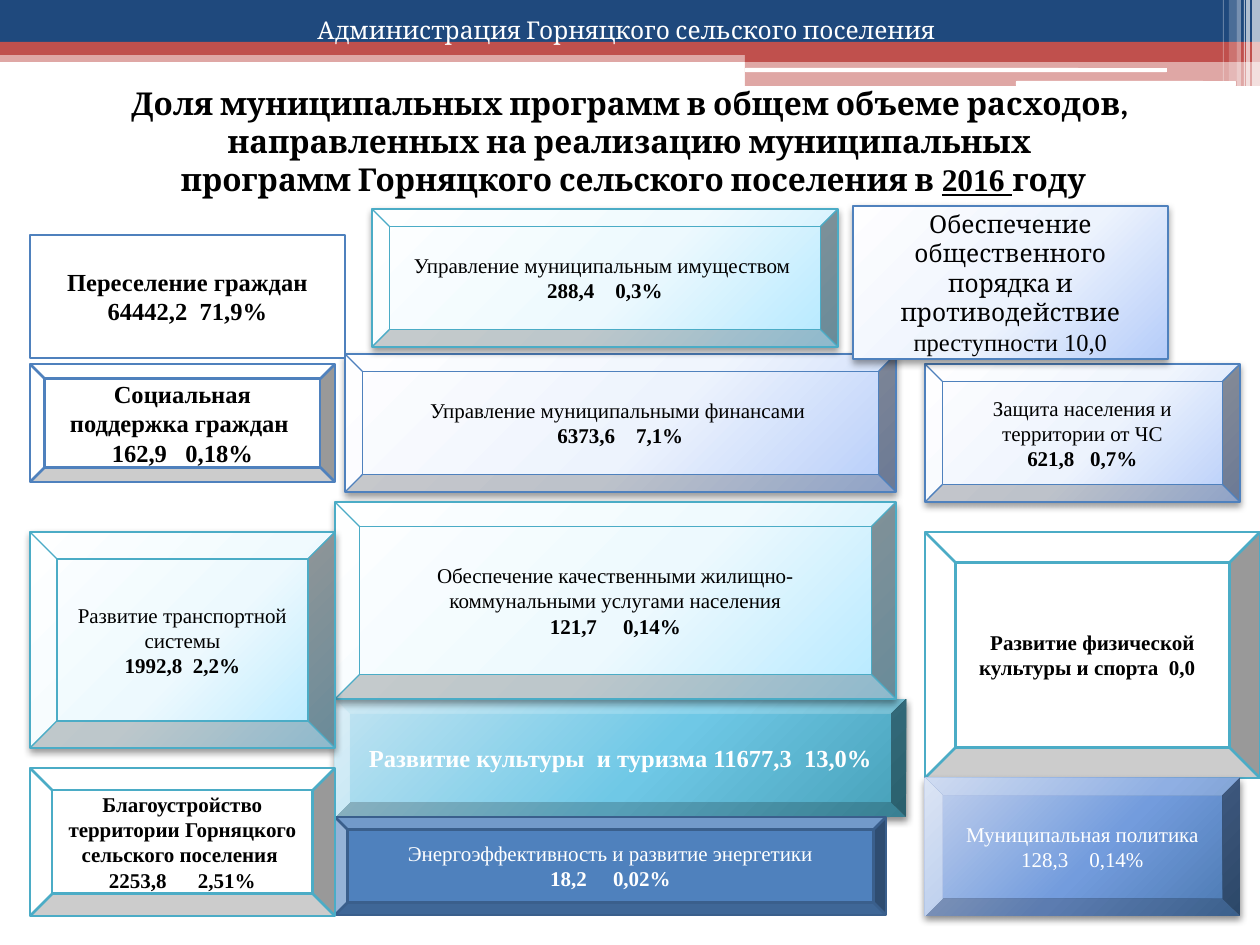
"""Build a slide on the shares of municipal programmes in total spending."""
import pptx
import pptx.dml.color
import pptx.enum.shapes
import pptx.enum.text
import pptx.oxml
import pptx.oxml.ns
import pptx.util

RGBColor = pptx.dml.color.RGBColor
Shapes = pptx.enum.shapes.MSO_SHAPE
Align = pptx.enum.text.PP_ALIGN
Anchor = pptx.enum.text.MSO_ANCHOR
qn = pptx.oxml.ns.qn
NAMESPACE = pptx.oxml.ns.nsdecls("a")

SCALE = 914400 / 126
NAVY = RGBColor(0x1F, 0x49, 0x7D)
RED = RGBColor(0xC0, 0x50, 0x4D)
WHITE = RGBColor(0xFF, 0xFF, 0xFF)
BLACK = RGBColor(0x00, 0x00, 0x00)
BLUE = RGBColor(0x4F, 0x81, 0xBD)
DARK_BLUE = RGBColor(0x3A, 0x5F, 0x8C)
TEAL = RGBColor(0x4B, 0xAC, 0xC6)
PALE_BLUE = [RGBColor(0xFE, 0xFE, 0xFF), RGBColor(0xED, 0xF3, 0xFD), RGBColor(0xB5, 0xCC, 0xF9)]
PALE_TEAL = [RGBColor(0xFE, 0xFF, 0xFF), RGBColor(0xED, 0xF9, 0xFE), RGBColor(0xB2, 0xE8, 0xFF)]
STRONG_BLUE = [RGBColor(0xC4, 0xD2, 0xEE), RGBColor(0x73, 0x9C, 0xDD), RGBColor(0x4A, 0x78, 0xB0)]
STRONG_TEAL = [RGBColor(0xC2, 0xE4, 0xF2), RGBColor(0x6F, 0xC8, 0xE6), RGBColor(0x46, 0xA0, 0xB8)]
SERIF = "Times New Roman"
HEADING = "Cambria"


def px(*lengths):
    return [pptx.util.Emu(round(length * SCALE)) for length in lengths]


def write_text(shape, paragraphs, size, color, alignment, anchor):
    frame = shape.text_frame
    frame.word_wrap = True
    frame.vertical_anchor = anchor
    for index, runs in enumerate(paragraphs):
        paragraph = frame.add_paragraph() if index else frame.paragraphs[0]
        paragraph.alignment = alignment
        for text, font_name, bold, underline in runs:
            run = paragraph.add_run()
            run.text = text
            run.font.name = font_name
            run.font.size = pptx.util.Pt(size)
            run.font.bold = bold
            run.font.underline = underline
            run.font.color.rgb = color


presentation = pptx.Presentation()
presentation.slide_width, presentation.slide_height = px(1260, 945)
slide = presentation.slides.add_slide(presentation.slide_layouts[6])

BANDS = [
    (Shapes.RECTANGLE, 0, 50, 1260, 12, RED, 50),
    (Shapes.RECTANGLE, 0, 0, 1260, 43, NAVY, 100),
    (Shapes.RECTANGLE, 0, 42, 1260, 13, RED, 100),
    (Shapes.RECTANGLE, 745, 49, 515, 13, RED, 100),
    (Shapes.RECTANGLE, 745, 61, 515, 25, RED, 50),
    (Shapes.ROUNDED_RECTANGLE, 745, 68, 422, 4, WHITE, 100),
    (Shapes.ROUNDED_RECTANGLE, 1016, 81, 220, 5, WHITE, 100),
    (Shapes.RECTANGLE, 1252, 0, 8, 86, WHITE, 65),
    (Shapes.RECTANGLE, 1246, 0, 4, 86, WHITE, 65),
    (Shapes.RECTANGLE, 1244, 0, 1, 86, WHITE, 60),
    (Shapes.RECTANGLE, 1237, 0, 4, 86, WHITE, 40),
    (Shapes.RECTANGLE, 1229, 0, 8, 81, WHITE, 20),
    (Shapes.RECTANGLE, 1223, 0, 1, 81, WHITE, 30),
]
for preset, left, top, width, height, color, opacity in BANDS:
    band = slide.shapes.add_shape(preset, *px(left, top, width, height))
    band.shadow.inherit = False
    band.fill.solid()
    band.fill.fore_color.rgb = color
    band.line.fill.background()
    if opacity < 100:
        solid_color = band.fill._xPr.find(".//" + qn("a:srgbClr"))
        solid_color.append(pptx.oxml.parse_xml(f'<a:alpha {NAMESPACE} val="{opacity * 1000}"/>'))

header = slide.shapes.add_textbox(*px(305, -29, 1557, 118))
write_text(header, [[("Администрация Горняцкого сельского поселения", HEADING, False, False)]],
           14, WHITE, Align.LEFT, Anchor.MIDDLE)

title = slide.shapes.add_textbox(*px(0, 78, 1260, 127))
write_text(title, [
    [("Доля муниципальных программ в общем объеме расходов, направленных на реализацию муниципальных",
      HEADING, True, False)],
    [(" программ Горняцкого сельского поселения в ", HEADING, True, False),
     ("2016 ", SERIF, True, True), ("году", HEADING, True, False)],
], 18, BLACK, Align.CENTER, Anchor.TOP)

BEVEL = Shapes.BEVEL
PROCESS = Shapes.FLOWCHART_PROCESS
PROGRAMMES = [
    (BEVEL, 30, 364, 305, 118, WHITE, BLUE, 14, BLACK,
     [[("Социальная поддержка граждан ", SERIF, True)], [("162,9   0,18%", SERIF, True)]]),
    (BEVEL, 345, 354, 551, 138, PALE_BLUE, BLUE, 12, BLACK,
     [[("Управление муниципальными финансами ", SERIF, False)], [("6373,6    7,1%", SERIF, True)]]),
    (BEVEL, 925, 532, 335, 246, WHITE, TEAL, 12, BLACK,
     [[("Развитие физической культуры и спорта  0,0  ", SERIF, True)]]),
    (BEVEL, 335, 699, 571, 118, STRONG_TEAL, None, 14, WHITE,
     [[("Развитие культуры  и туризма 11677,3  13,0%", SERIF, True)]]),
    (BEVEL, 335, 817, 551, 98, BLUE, DARK_BLUE, 12, WHITE,
     [[("Энергоэффективность и развитие энергетики", SERIF, False)], [("18,2     0,02%", SERIF, True)]]),
    (BEVEL, 335, 502, 561, 197, PALE_TEAL, TEAL, 12, BLACK,
     [[("Обеспечение качественными жилищно-коммунальными услугами населения", SERIF, False)],
      [("121,7     0,14%", SERIF, True)]]),
    (BEVEL, 30, 532, 305, 216, PALE_TEAL, TEAL, 12, BLACK,
     [[("Развитие транспортной системы", SERIF, False)], [("1992,8  2,2%", SERIF, True)]]),
    (BEVEL, 925, 364, 315, 138, PALE_BLUE, BLUE, 12, BLACK,
     [[("Защита населения и территории от ЧС", SERIF, False)], [("621,8   0,7%", SERIF, True)]]),
    (BEVEL, 925, 778, 315, 138, STRONG_BLUE, None, 12, WHITE,
     [[("Муниципальная политика", SERIF, False)], [("128,3    0,14%", SERIF, False)]]),
    (BEVEL, 30, 768, 305, 148, WHITE, TEAL, 12, BLACK,
     [[("Благоустройство территории Горняцкого сельского поселения  2253,8      2,51%", SERIF, True)]]),
    (PROCESS, 30, 235, 315, 123, WHITE, BLUE, 14, BLACK,
     [[("Переселение граждан 64442,2  71,9%", SERIF, True)]]),
    (PROCESS, 853, 206, 315, 153, PALE_BLUE, BLUE, 14, BLACK,
     [[("Обеспечение общественного порядка и противодействие ", HEADING, False),
       ("преступности 10,0", SERIF, False)]]),
    (BEVEL, 372, 209, 466, 138, PALE_TEAL, TEAL, 12, BLACK,
     [[("Управление муниципальным имуществом ", SERIF, False)], [("288,4    0,3%", SERIF, True)]]),
]
for preset, left, top, width, height, fill, outline, size, color, paragraphs in PROGRAMMES:
    programme = slide.shapes.add_shape(preset, *px(left, top, width, height))
    programme.shadow.inherit = False
    properties = programme._element.spPr
    shaded = isinstance(fill, list)
    if shaded:
        stops = "".join(f'<a:gs pos="{position}000"><a:srgbClr val="{stop}"/></a:gs>'
                        for position, stop in zip((0, 55, 100), fill))
        properties.find(qn("a:prstGeom")).addnext(pptx.oxml.parse_xml(
            f'<a:gradFill {NAMESPACE} rotWithShape="1"><a:gsLst>{stops}</a:gsLst><a:path path="circle">'
            '<a:fillToRect l="-40000" t="-90000" r="140000" b="190000"/></a:path></a:gradFill>'))
        opacity = 40 if outline else 45
        properties.find(qn("a:effectLst")).append(pptx.oxml.parse_xml(
            f'<a:outerShdw {NAMESPACE} blurRad="51000" dist="25400" dir="5400000" rotWithShape="0">'
            f'<a:srgbClr val="{BLACK}"><a:alpha val="{opacity}000"/></a:srgbClr></a:outerShdw>'))
    else:
        programme.fill.solid()
        programme.fill.fore_color.rgb = fill
    if outline:
        programme.line.color.rgb = outline
        programme.line.width = pptx.util.Pt(0.75 if shaded else 1.5)
    else:
        programme.line.fill.background()
    if "Благоустройство" in paragraphs[0][0][0]:
        programme.adjustments[0] = 0.15
    plain_runs = [[(*run, False) for run in runs] for runs in paragraphs]
    write_text(programme, plain_runs, size, color, Align.CENTER, Anchor.MIDDLE)

presentation.save("out.pptx")
